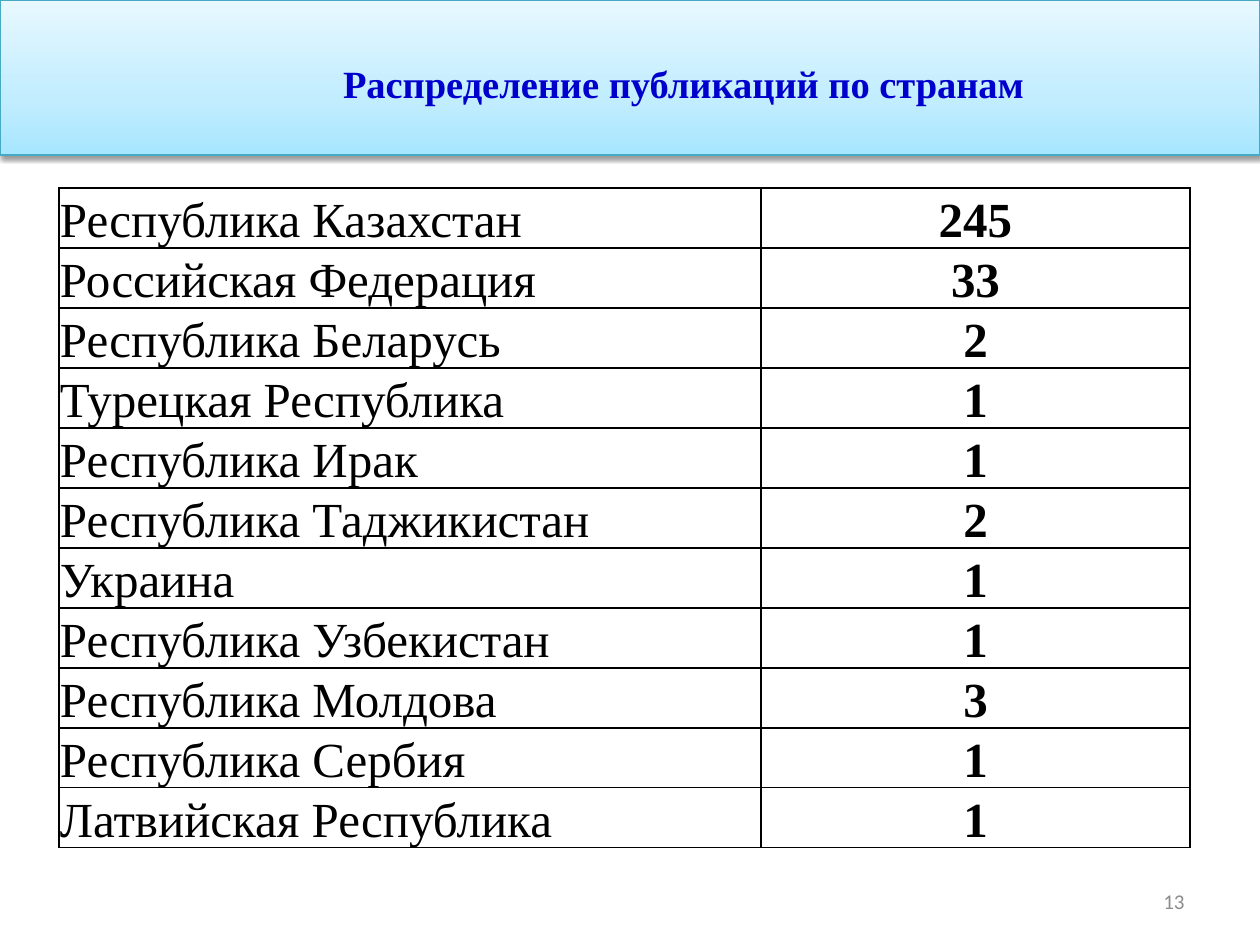
from copy import deepcopy

from lxml import etree
from pptx import Presentation
from pptx import util as u
from pptx.dml.color import RGBColor
from pptx.enum import shapes, text
from pptx.oxml import ns

PX = u.Inches(10) / 1260
BLACK = RGBColor(0x00, 0x00, 0x00)
WHITE = RGBColor(0xFF, 0xFF, 0xFF)
TITLE_BLUE = RGBColor(0x00, 0x00, 0xCC)
NUMBER_GRAY = RGBColor(0x8C, 0x8C, 0x8C)
BAND_LINE = RGBColor(0x46, 0xAA, 0xC5)
BAND_STOPS = [
    (0, RGBColor(0xA7, 0xE6, 0xFF)),
    (0.35, RGBColor(0xC1, 0xED, 0xFF)),
    (1, RGBColor(0xE7, 0xF8, 0xFF)),
]
SERIF = "Times New Roman"
COUNTRIES = [
    ("Республика Казахстан", 245),
    ("Российская Федерация", 33),
    ("Республика Беларусь", 2),
    ("Турецкая Республика", 1),
    ("Республика Ирак", 1),
    ("Республика Таджикистан", 2),
    ("Украина", 1),
    ("Республика Узбекистан", 1),
    ("Республика Молдова", 3),
    ("Республика Сербия", 1),
    ("Латвийская Республика", 1),
]


def px(*lengths):
    """Turn pixel lengths into EMU."""
    return [u.Emu(round(length * PX)) for length in lengths]


def write(frame, wording, align, color, **font_format):
    """Put one formatted paragraph into a text frame or table cell."""
    paragraph = frame.paragraphs[0]
    paragraph.alignment = align
    run = paragraph.add_run()
    run.text = wording
    run.font.color.rgb = color
    for key, value in font_format.items():
        setattr(run.font, key, value)


prs = Presentation()
prs.slide_width, prs.slide_height = px(1260, 945)
slide = prs.slides.add_slide(prs.slide_layouts[5])

# Header band with gradient and soft shadow
band = slide.shapes.add_shape(shapes.MSO_SHAPE.RECTANGLE, *px(0, 0, 1260, 155))
band.line.color.rgb = BAND_LINE
band.line.width = u.Pt(0.75)
band.fill.gradient()
band.fill.gradient_angle = 90
stop_list = band.element.spPr.find(".//" + ns.qn("a:gsLst"))
stop_list.append(deepcopy(stop_list[0]))
for stop, (position, color) in zip(band.fill.gradient_stops, BAND_STOPS):
    stop.position = position
    stop.color.rgb = color
band.shadow.inherit = False
effects = band.element.spPr.find(ns.qn("a:effectLst"))
shadow = etree.SubElement(effects, ns.qn("a:outerShdw"), blurRad=str(u.Pt(3.1)),
                          dist=str(u.Pt(1.6)), dir="5400000", rotWithShape="0")
shadow_color = etree.SubElement(shadow, ns.qn("a:srgbClr"), val=str(BLACK))
etree.SubElement(shadow_color, ns.qn("a:alpha"), val="38000")

# Title, in front of the band
title = slide.shapes.title
band.element.addnext(title.element)
title.left, title.top, title.width, title.height = px(123, 54, 1121, 59)
title.text_frame.vertical_anchor = text.MSO_ANCHOR.TOP
write(title.text_frame, "Распределение публикаций по странам", text.PP_ALIGN.CENTER,
      TITLE_BLUE, size=u.Pt(22), name=SERIF, bold=True)

# Publications by country
table = slide.shapes.add_table(len(COUNTRIES), 2, *px(59, 188, 1131, 660)).table
table.first_row = table.horz_banding = False
for column, width in zip(table.columns, px(702, 429)):
    column.width = width
cell_format = {
    "vertical_anchor": text.MSO_ANCHOR.BOTTOM,
    "margin_left": px(1)[0],
    "margin_right": px(1)[0],
    "margin_top": px(1)[0],
    "margin_bottom": 0,
}
for row, (country, count) in enumerate(COUNTRIES):
    table.rows[row].height = px(60)[0]
    for col, (wording, align) in enumerate([(country, text.PP_ALIGN.LEFT),
                                            (str(count), text.PP_ALIGN.CENTER)]):
        cell = table.cell(row, col)
        for key, value in cell_format.items():
            setattr(cell, key, value)
        write(cell.text_frame, wording, align, BLACK,
              size=u.Pt(28), name=SERIF, bold=col == 1)
        properties = cell._tc.get_or_add_tcPr()
        for side in ("a:lnL", "a:lnR", "a:lnT", "a:lnB"):
            border = etree.SubElement(properties, ns.qn(side), w=str(u.Pt(1)))
            border_fill = etree.SubElement(border, ns.qn("a:solidFill"))
            etree.SubElement(border_fill, ns.qn("a:srgbClr"), val=str(BLACK))
        cell.fill.solid()
        cell.fill.fore_color.rgb = WHITE

# Slide number
number = slide.shapes.add_textbox(*px(903, 876, 294, 50)).text_frame
number.word_wrap = True
number.vertical_anchor = text.MSO_ANCHOR.MIDDLE
write(number, "13", text.PP_ALIGN.RIGHT, NUMBER_GRAY, size=u.Pt(12), name="Calibri")

prs.save("out.pptx")
